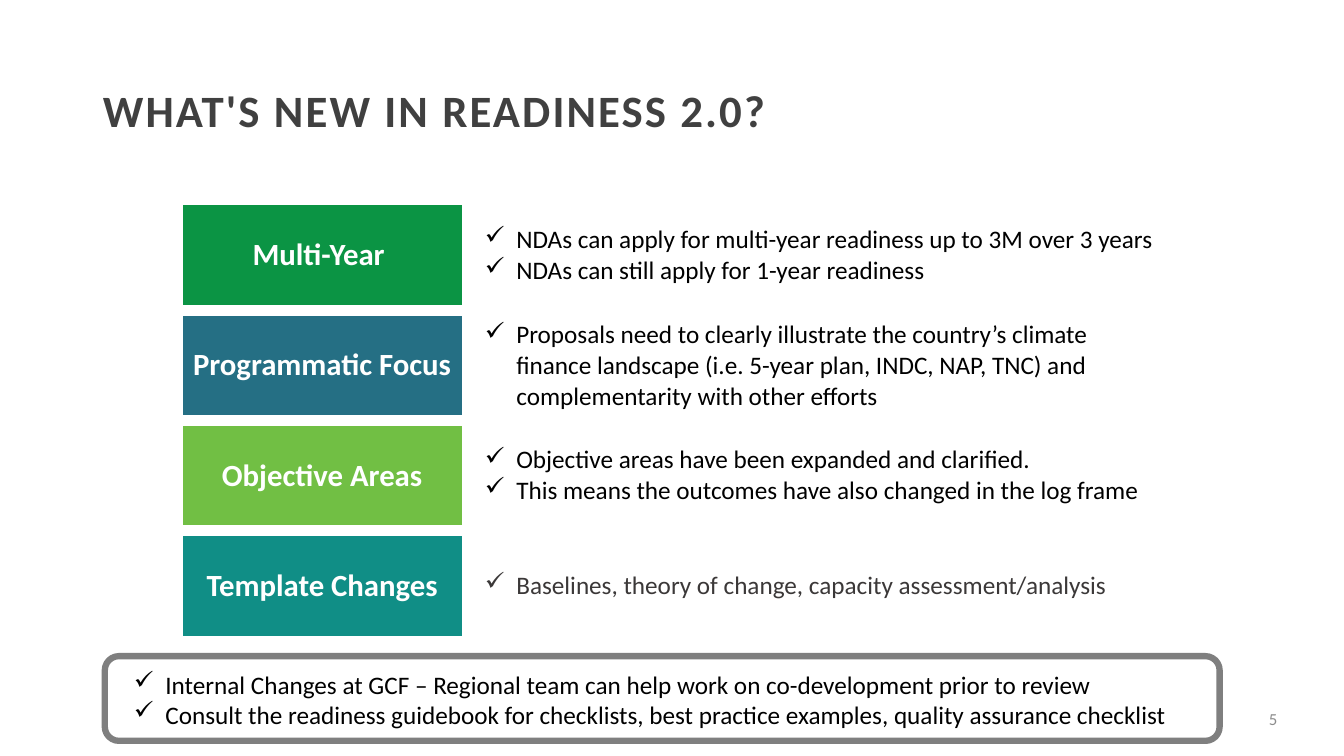
from lxml import etree
from pptx import Presentation
from pptx.dml.color import RGBColor
from pptx.enum.shapes import MSO_SHAPE
from pptx.enum.text import MSO_ANCHOR, MSO_AUTO_SIZE, PP_ALIGN
from pptx.oxml.ns import qn
from pptx.util import Pt

LEFT, CENTER, RIGHT = PP_ALIGN.LEFT, PP_ALIGN.CENTER, PP_ALIGN.RIGHT
MIDDLE, TOP = MSO_ANCHOR.MIDDLE, MSO_ANCHOR.TOP
NO_AUTOFIT = MSO_AUTO_SIZE.NONE
ROUNDED_RECTANGLE = MSO_SHAPE.ROUNDED_RECTANGLE

WHITE = RGBColor(0xFF, 0xFF, 0xFF)
BLACK = RGBColor(0x00, 0x00, 0x00)
TITLE_GREY = RGBColor(0x40, 0x40, 0x40)
NUMBER_GREY = RGBColor(0x8C, 0x8C, 0x8C)
FRAME_GREY = RGBColor(0x7F, 0x7F, 0x7F)
TEXT_GREY = RGBColor(0x3B, 0x38, 0x38)
GREEN = RGBColor(0x0B, 0x94, 0x44)
BLUE = RGBColor(0x25, 0x6F, 0x84)
LIME = RGBColor(0x71, 0xBF, 0x44)
TEAL = RGBColor(0x10, 0x8E, 0x86)

FONT = "Calibri"
CHECK = "✓"
CHECK_HANG = Pt(22.5)
TABLE_LEFT, TABLE_TOP, TABLE_STEP = 129.96, 146.16, 78.8
LABEL_WIDTH, POINTS_WIDTH, ROW_HEIGHT = 200.16, 506.88, 72
CELL_MARGIN = 7.2

TOPICS = [
    ("Multi-Year ", GREEN, BLACK, [
        "NDAs can apply for multi-year readiness up to 3M over 3 years",
        "NDAs can still apply for 1-year readiness",
    ]),
    ("Programmatic Focus", BLUE, BLACK, [
        "Proposals need to clearly illustrate the country’s climate finance landscape "
        "(i.e. 5-year plan, INDC, NAP, TNC) and complementarity with other efforts",
    ]),
    ("Objective Areas", LIME, BLACK, [
        "Objective areas have been expanded and clarified.",
        "This means the outcomes have also changed in the log frame",
    ]),
    ("Template Changes", TEAL, TEXT_GREY, [
        "Baselines, theory of change, capacity assessment/analysis",
    ]),
]
CLOSING_POINTS = [
    "Internal Changes at GCF – Regional team can help work on co-development prior to review",
    "Consult the readiness guidebook for checklists, best practice examples, "
    "quality assurance checklist",
]


def set_values(target, values):
    for name, value in values.items():
        setattr(target, name, value)


def write_paragraph(paragraph, text, size, color, bold=False, alignment=LEFT):
    paragraph.alignment = alignment
    run = paragraph.add_run()
    run.text = text
    set_values(run.font, {"name": FONT, "size": Pt(size), "bold": bold})
    run.font.color.rgb = color
    return run


def write_checklist(text_frame, points, color, left_margin):
    for index, point in enumerate(points):
        paragraph = text_frame.add_paragraph() if index else text_frame.paragraphs[0]
        properties = paragraph._p.get_or_add_pPr()
        properties.set("marL", str(left_margin))
        properties.set("indent", str(-CHECK_HANG))
        etree.SubElement(properties, qn("a:buChar")).set("char", CHECK)
        write_paragraph(paragraph, point, 18, color)


def add_text_box(slide, left, top, width, height, anchor):
    text_box = slide.shapes.add_textbox(Pt(left), Pt(top), Pt(width), Pt(height))
    set_values(text_box.text_frame, {"word_wrap": True, "vertical_anchor": anchor})
    return text_box.text_frame


def add_title(slide, text):
    title = slide.shapes.title
    set_values(title, {"left": Pt(66.24), "top": Pt(28.8),
                       "width": Pt(727.2), "height": Pt(104.4)})
    set_values(title.text_frame, {"word_wrap": True, "auto_size": NO_AUTOFIT,
                                  "vertical_anchor": MIDDLE})
    paragraph = title.text_frame.paragraphs[0]
    paragraph.line_spacing = 0.9
    run = write_paragraph(paragraph, text, 32, TITLE_GREY, True)
    run._r.get_or_add_rPr().set("spc", "150")


def add_topic(slide, top, label, fill_color, text_color, points):
    table = slide.shapes.add_table(
        1, 2, Pt(TABLE_LEFT), Pt(top), Pt(LABEL_WIDTH + POINTS_WIDTH), Pt(ROW_HEIGHT)).table
    set_values(table, {"first_row": False, "horz_banding": False})
    for column, width in zip(table.columns, (LABEL_WIDTH, POINTS_WIDTH)):
        column.width = Pt(width)
    label_cell, points_cell = table.cell(0, 0), table.cell(0, 1)
    for cell in (label_cell, points_cell):
        set_values(cell, {"vertical_anchor": MIDDLE, "margin_left": Pt(CELL_MARGIN),
                          "margin_right": Pt(CELL_MARGIN)})
    label_cell.fill.solid()
    label_cell.fill.fore_color.rgb = fill_color
    points_cell.fill.background()
    write_paragraph(label_cell.text_frame.paragraphs[0], label, 22, WHITE, True, CENTER)
    write_checklist(points_cell.text_frame, points, text_color, Pt(31.5))


def add_frame(slide):
    frame = slide.shapes.add_shape(
        ROUNDED_RECTANGLE, Pt(74.88), Pt(468.72), Pt(796.32), Pt(60.48))
    frame.shadow.inherit = False
    frame.fill.background()
    frame.line.color.rgb = FRAME_GREY
    frame.line.width = Pt(4.5)


def main():
    presentation = Presentation()
    set_values(presentation, {"slide_width": Pt(960), "slide_height": Pt(540)})
    slide = presentation.slides.add_slide(presentation.slide_layouts[5])

    number_frame = add_text_box(slide, 703.44, 498.96, 216, 28.8, MIDDLE)
    write_paragraph(number_frame.paragraphs[0], "5", 12, NUMBER_GREY, alignment=RIGHT)
    add_title(slide, "WHAT'S NEW IN READINESS 2.0?")
    for index, topic in enumerate(TOPICS):
        add_topic(slide, TABLE_TOP + index * TABLE_STEP, *topic)
    add_frame(slide)
    closing_frame = add_text_box(slide, 88.56, 474.48, 782.64, 51.12, TOP)
    write_checklist(closing_frame, CLOSING_POINTS, BLACK, CHECK_HANG)

    presentation.save("out.pptx")


if __name__ == "__main__":
    main()
